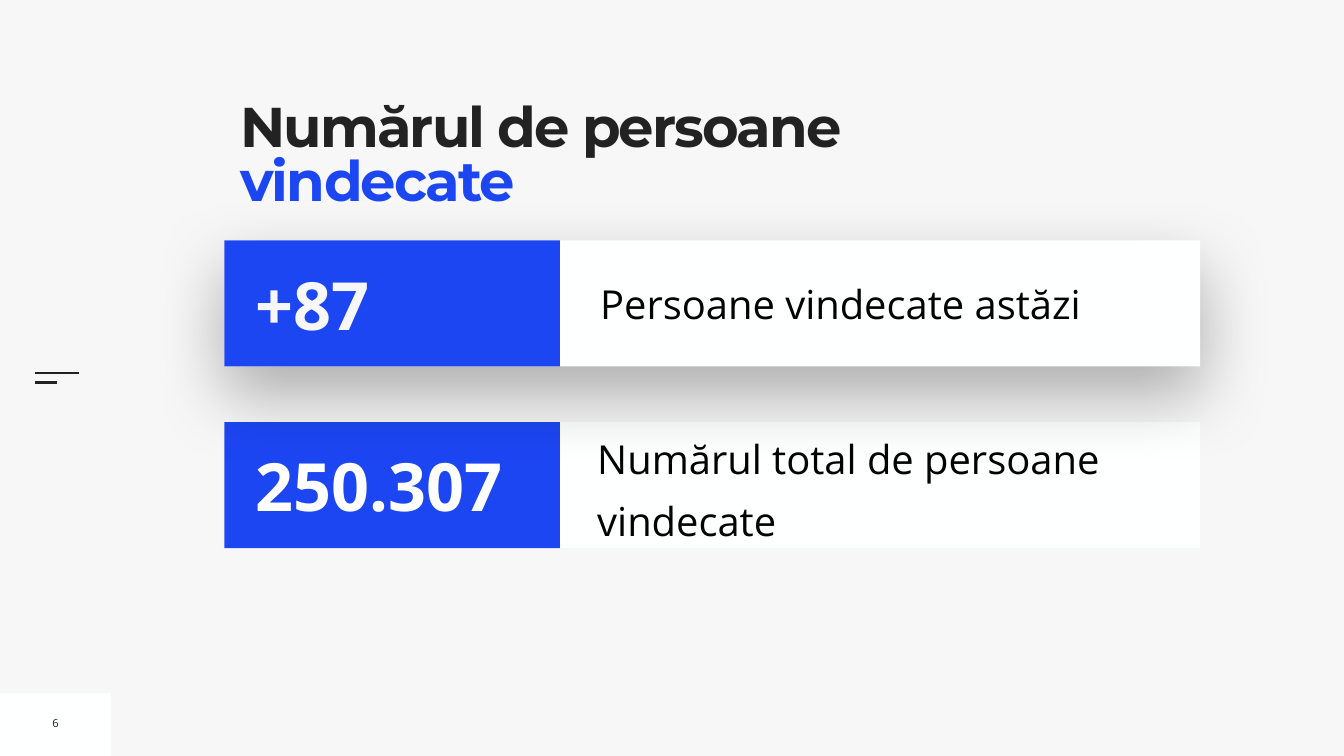
from lxml.etree import SubElement
from pptx import Presentation
from pptx.dml.color import RGBColor
from pptx.enum.shapes import MSO_CONNECTOR, MSO_SHAPE
from pptx.enum.text import MSO_ANCHOR, MSO_AUTO_SIZE, PP_ALIGN
from pptx.oxml.ns import qn
from pptx.util import Pt

PAPER, WHITE, INK, BLUE, BLACK = "F7F7F7", "FEFFFF", "222222", "1D46F3", "000000"
HEAD, BODY = "Montserrat", "Open Sans"


def paint(fmt, color):
    fmt.solid()
    fmt.fore_color.rgb = RGBColor.from_string(color)


def write(para, text, size=57, font=BODY, color=BLACK, bold=False, space=None):
    run = para.add_run()
    run.text = text
    run.font.size = Pt(size)
    run.font.name = font
    run.font.bold = bold
    paint(run.font.fill, color)
    if space is not None:
        run.font._element.set("spc", str(round(space * 100)))


class Deck:
    """Hold the style and the current slide, and add elements to it."""

    def __init__(self, width, height):
        self.file = Presentation()
        self.file.slide_width, self.file.slide_height = Pt(width), Pt(height)
        self.slide = self.file.slides.add_slide(self.file.slide_layouts[5])
        paint(self.slide.background.fill, PAPER)

    def frame(self, shape, inset=0, anchor=MSO_ANCHOR.MIDDLE, wrap=True, size=MSO_AUTO_SIZE.NONE):
        frame = shape.text_frame
        frame.margin_left = frame.margin_right = Pt(inset)
        frame.margin_top = frame.margin_bottom = Pt(inset)
        frame.vertical_anchor = anchor
        frame.word_wrap = wrap
        frame.auto_size = size
        return frame.paragraphs[0]

    def title(self, left, top, width, height, parts):
        shape = self.slide.shapes.title
        shape.left, shape.top = Pt(left), Pt(top)
        shape.width, shape.height = Pt(width), Pt(height)
        paint(shape.fill, PAPER)
        para = self.frame(shape, anchor=MSO_ANCHOR.TOP)
        para.alignment = PP_ALIGN.LEFT
        para.line_spacing = 0.8
        for text, color in parts:
            write(para, text, size=80, font=HEAD, color=color, bold=True, space=-2.7)

    def box(self, left, top, width, height, color, shade=False):
        shape = self.slide.shapes.add_shape(
            MSO_SHAPE.RECTANGLE, Pt(left), Pt(top), Pt(width), Pt(height))
        shape.shadow.inherit = False
        paint(shape.fill, color)
        shape.line.fill.background()
        if shade:
            glow = SubElement(
                shape._element.spPr.find(qn("a:effectLst")), qn("a:outerShdw"),
                blurRad=str(Pt(100)), dist=str(Pt(40)), dir="5400000",
                algn="ctr", rotWithShape="0")
            tint = SubElement(glow, qn("a:srgbClr"), val=BLACK)
            SubElement(tint, qn("a:alpha"), val="30000")

    def text(self, left, top, width, height, text, inset=7.2, wrap=True,
             align=PP_ALIGN.LEFT, lead=None, before=None, **style):
        shape = self.slide.shapes.add_textbox(Pt(left), Pt(top), Pt(width), Pt(height))
        para = self.frame(shape, inset, wrap=wrap, size=MSO_AUTO_SIZE.SHAPE_TO_FIT_TEXT)
        para.alignment = align
        if lead:
            para.line_spacing = lead
        if before:
            para.space_before = Pt(before)
        write(para, text, **style)

    def line(self, left, top, width):
        line = self.slide.shapes.add_connector(
            MSO_CONNECTOR.STRAIGHT, Pt(left), Pt(top), Pt(left + width), Pt(top))
        paint(line.line.fill, INK)
        line.line.width = Pt(3)
        SubElement(line._element.spPr, qn("a:effectLst"))

    def row(self, top, count, color, shade=False):
        self.box(320.4, top, 1394, 180, WHITE, shade)
        self.box(320.4, top, 479.5, 180, BLUE)
        self.text(358.5, top + 25, 434, 130, count, size=95, color=color, bold=True)


def main():
    deck = Deck(1920, 1080)
    deck.box(0, 990.7, 158.4, 89.3, WHITE)
    for top, width in ((533.5, 63.4), (546.5, 31.7)):
        deck.line(49.7, top, width)
    deck.title(343.4, 149, 936.7, 196.6,
               [("Numărul de persoane ", INK), ("vindecate", BLUE)])
    deck.text(67, 1014.5, 24.5, 36.7, "6", wrap=False,
              align=PP_ALIGN.CENTER, size=16, color=INK)
    deck.row(603, "250.307", "FFFFFF")
    deck.text(853.2, 604, 860.4, 170, "Numărul total de persoane vindecate",
              inset=0, lead=1.3, before=20)
    deck.row(343.5, "+87", PAPER, shade=True)
    deck.text(850.3, 391.7, 846.7, 83.5, "Persoane vindecate astăzi")
    deck.file.save("out.pptx")


if __name__ == "__main__":
    main()
